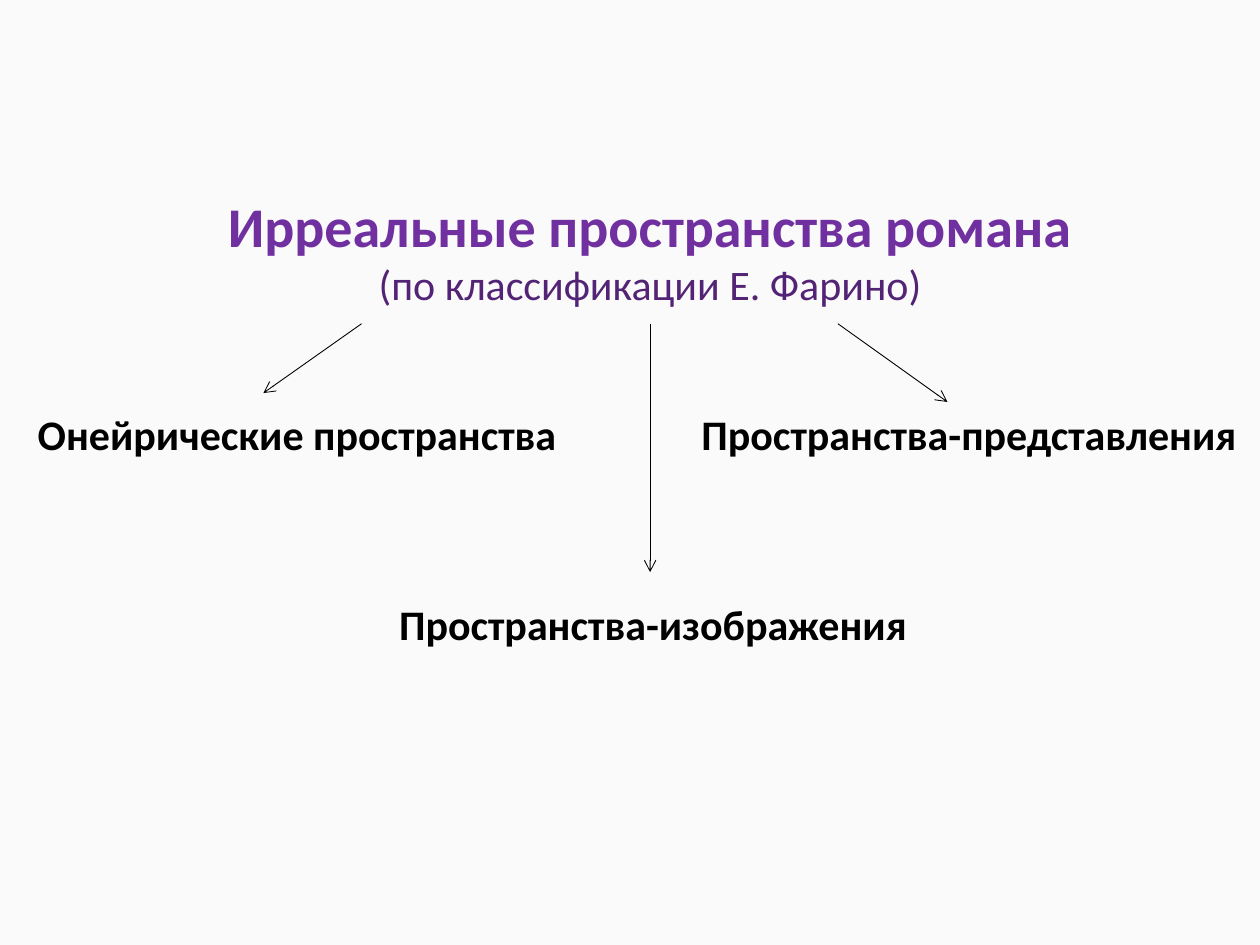
from lxml import etree
from pptx import Presentation
from pptx.dml.color import RGBColor
from pptx.enum.shapes import MSO_CONNECTOR
from pptx.enum.text import MSO_AUTO_SIZE, PP_ALIGN
from pptx.oxml.ns import qn
from pptx.util import Pt

STRAIGHT = MSO_CONNECTOR.STRAIGHT
FIT_SHAPE = MSO_AUTO_SIZE.SHAPE_TO_FIT_TEXT
CENTER, LEFT = PP_ALIGN.CENTER, PP_ALIGN.LEFT
COLORS = {"background": "FAFAFA", "title": "7030A0", "subtitle": "532476", "black": "000000"}


def color(name):
    return RGBColor.from_string(COLORS[name])


def add_text(left, top, width, height, lines, alignment):
    frame = slide.shapes.add_textbox(Pt(left), Pt(top), Pt(width), Pt(height)).text_frame
    frame.word_wrap = False
    frame.auto_size = FIT_SHAPE
    for index, (text, size, bold, shade) in enumerate(lines):
        paragraph = frame.add_paragraph() if index else frame.paragraphs[0]
        paragraph.text = text
        paragraph.alignment = alignment
        paragraph.font.name = "Calibri"
        paragraph.font.size = Pt(size)
        paragraph.font.bold = bold
        paragraph.font.color.rgb = color(shade)


prs = Presentation()
prs.slide_width, prs.slide_height = Pt(720), Pt(540)
slide = prs.slides.add_slide(prs.slide_layouts[6])
slide.background.fill.solid()
slide.background.fill.fore_color.rgb = color("background")

heading = [
    ("Ирреальные пространства романа", 32, True, "title"),
    ("(по классификации Е. Фарино)", 24, False, "subtitle"),
]
add_text(121, 105.8, 501, 75, heading, CENTER)

space_types = [
    ("Онейрические пространства", 14.4, 229.7, 314),
    ("Пространства-изображения", 221, 338.4, 307.4),
    ("Пространства-представления", 393.8, 229.7, 324),
]
for name, left, top, width in space_types:
    add_text(left, top, width, 36, [(name, 24, True, "black")], LEFT)

arrow_top = 185
for start_x, end_x, end_y in [(206.6, 150.5, 224.6), (371.5, 371.5, 326.9), (478.8, 541.4, 229.7)]:
    arrow = slide.shapes.add_connector(STRAIGHT, Pt(start_x), Pt(arrow_top), Pt(end_x), Pt(end_y))
    arrow.line.width = Pt(0.5)
    arrow.line.color.rgb = color("black")
    properties = arrow._element.spPr
    etree.SubElement(properties.find(qn("a:ln")), qn("a:tailEnd"), type="arrow")
    etree.SubElement(properties, qn("a:effectLst"))

prs.save("out.pptx")
